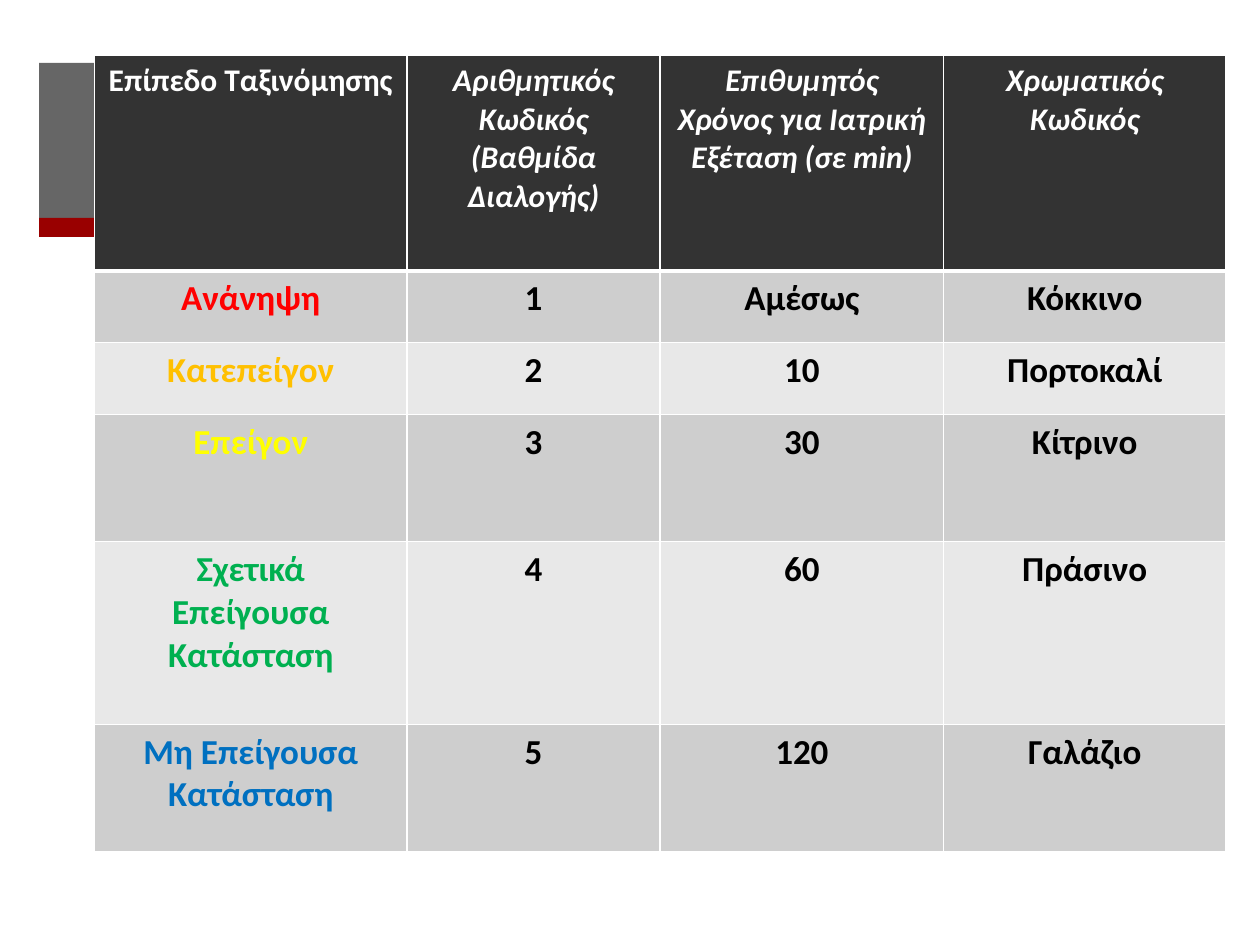
"""Build the triage level table slide."""
from dataclasses import dataclass

from lxml.etree import SubElement
from pptx import Presentation
from pptx.dml.color import RGBColor
from pptx.enum.shapes import MSO_SHAPE
from pptx.enum.text import PP_ALIGN
from pptx.oxml.ns import qn
from pptx.util import Inches, Pt

COLORS = {
    "white": "FFFFFF", "black": "000000", "header": "333333",
    "odd": "CECECE", "even": "E8E8E8", "band": "262626", "accent": "990000",
    "red": "FF0000", "orange": "FFC000", "yellow": "FFFF00",
    "green": "00B050", "blue": "0070C0",
}
COL_WIDTHS = (2.48, 2.01, 2.25, 2.24)
HEADERS = (
    ("Επίπεδο Ταξινόμησης",),
    ("Αριθμητικός", "Κωδικός (Βαθμίδα", "Διαλογής)"),
    ("Επιθυμητός", "Χρόνος για Ιατρική", "Εξέταση (σε min)"),
    ("Χρωματικός", "Κωδικός"),
)
HEADER_HEIGHT = 1.71


@dataclass
class Bar:
    left: float
    top: float
    width: float
    height: float
    color: str
    opacity: int = 100


@dataclass
class Level:
    name: tuple[str, ...]
    color: str
    code: str
    minutes: str
    label: str
    height: float


BARS = (
    Bar(0.31, 0.5, 9.38, 1.24, "band", 70),
    Bar(0.31, 1.73, 1.75, 0.15, "accent"),
)
LEVELS = (
    Level(("Ανάνηψη",), "red", "1", "Αμέσως", "Κόκκινο", 0.57),
    Level(("Κατεπείγον",), "orange", "2", "10", "Πορτοκαλί", 0.57),
    Level(("Επείγον",), "yellow", "3", "30", "Κίτρινο", 1.01),
    Level(("Σχετικά", "Επείγουσα", "Κατάσταση"), "green", "4", "60", "Πράσινο", 1.45),
    Level(("Μη Επείγουσα Κατάσταση",), "blue", "5", "120", "Γαλάζιο", 1.01),
)


def rgb(name: str) -> RGBColor:
    return RGBColor.from_string(COLORS[name])


def draw_bar(s, bar: Bar) -> None:
    sp = s.shapes.add_shape(MSO_SHAPE.RECTANGLE, Inches(bar.left), Inches(bar.top),
                            Inches(bar.width), Inches(bar.height))
    sp.shadow.inherit = False
    sp.line.fill.background()
    sp.fill.solid()
    sp.fill.fore_color.rgb = rgb(bar.color)
    if bar.opacity < 100:
        color = sp.fill._xPr.find(qn("a:solidFill"))[0]
        SubElement(color, qn("a:alpha"), val=str(bar.opacity * 1000))


def set_borders(cell, top: float, bottom: float) -> None:
    tc_pr = cell._tc.get_or_add_tcPr()
    for tag, width in (("lnL", 1), ("lnR", 1), ("lnT", top), ("lnB", bottom)):
        ln = SubElement(tc_pr, qn(f"a:{tag}"), w=str(Pt(width)))
        fill = SubElement(ln, qn("a:solidFill"))
        SubElement(fill, qn("a:srgbClr"), val=COLORS["white"])


def fill_cell(cell, lines: tuple[str, ...], fill: str, color: str,
              size: int, italic: bool = False) -> None:
    cell.fill.solid()
    cell.fill.fore_color.rgb = rgb(fill)
    tf = cell.text_frame
    for i, line in enumerate(lines):
        p = tf.add_paragraph() if i else tf.paragraphs[0]
        p.alignment = PP_ALIGN.CENTER
        r = p.add_run()
        r.text = line
        r.font.name = "Calibri"
        r.font.size = Pt(size)
        r.font.bold = True
        r.font.italic = italic
        r.font.color.rgb = rgb(color)


def draw_table(s) -> None:
    heights = (HEADER_HEIGHT, *(level.height for level in LEVELS))
    table = s.shapes.add_table(len(heights), len(COL_WIDTHS), Inches(0.75), Inches(0.44),
                               Inches(sum(COL_WIDTHS)), Inches(sum(heights))).table
    for col, width in zip(table.columns, COL_WIDTHS):
        col.width = Inches(width)
    for i, height in enumerate(heights):
        table.rows[i].height = Inches(height)
        for cell in table.rows[i].cells:
            set_borders(cell, 3 if i == 1 else 1, 3 if i == 0 else 1)
    for j, lines in enumerate(HEADERS):
        fill_cell(table.cell(0, j), lines, "header", "white", 18, italic=j > 0)
    for i, level in enumerate(LEVELS, 1):
        fill = "odd" if i % 2 else "even"
        fill_cell(table.cell(i, 0), level.name, fill, level.color, 20)
        for j, text in enumerate((level.code, level.minutes, level.label), 1):
            fill_cell(table.cell(i, j), (text,), fill, "black", 20)


def main() -> None:
    prs = Presentation()
    prs.slide_width, prs.slide_height = Inches(10), Inches(7.5)
    s = prs.slides.add_slide(prs.slide_layouts[6])
    for bar in BARS:
        draw_bar(s, bar)
    draw_table(s)
    prs.save("out.pptx")


if __name__ == "__main__":
    main()
